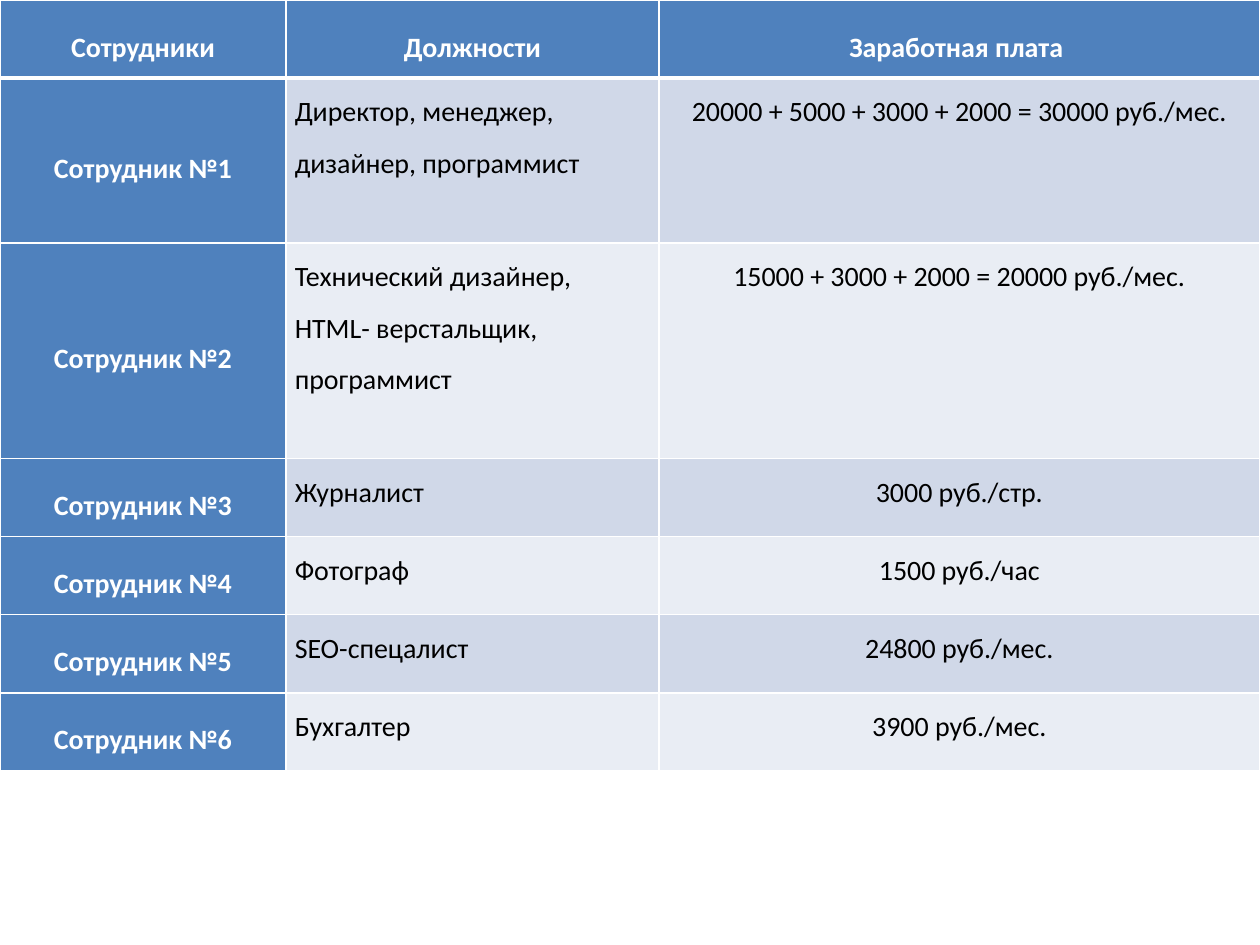
from lxml import etree
from pptx import Presentation
from pptx import util as u
from pptx.dml.color import RGBColor
from pptx.enum import text
from pptx.oxml.ns import qn

BLUE, WHITE, BLACK = "4F81BD", "FFFFFF", "000000"
BANDS = ["D0D8E8", "E9EDF4"]
COLUMN_WIDTHS = [2.27, 2.96, 4.77]
ROW_HEIGHTS = [0.62, 1.31, 1.71] + [0.62] * 4
HEADINGS = ["Сотрудники", "Должности", "Заработная плата "]
EMPLOYEES = [
    ("Директор, менеджер, дизайнер, программист",
     "20000 + 5000 + 3000 + 2000 = 30000 руб./мес."),
    ("Технический дизайнер, HTML- верстальщик, программист",
     "15000 + 3000 + 2000 = 20000 руб./мес."),
    ("Журналист", "3000 руб./стр."),
    ("Фотограф", "1500 руб./час"),
    ("SEO-спецалист", "24800 руб./мес."),
    ("Бухгалтер", "3900 руб./мес."),
]


def color(value):
    return RGBColor.from_string(value)


def apply_format(target, values):
    for name, value in values.items():
        setattr(target, name, value)


def add_borders(cell, bottom_width):
    properties = cell._tc.get_or_add_tcPr()
    for side, width in [("L", 1), ("R", 1), ("T", 1), ("B", bottom_width)]:
        line = etree.SubElement(properties, qn(f"a:ln{side}"), w=str(u.Pt(width)))
        fill = etree.SubElement(line, qn("a:solidFill"))
        etree.SubElement(fill, qn("a:srgbClr"), val=WHITE)


def fill_cell(cell, content, row, column):
    is_heading = row == 0 or column == 0
    add_borders(cell, 3 if row == 0 else 1)
    cell.fill.solid()
    cell.fill.fore_color.rgb = color(BLUE if is_heading else BANDS[(row - 1) % 2])
    apply_format(cell, {
        "text": content,
        "margin_left": u.Inches(0.07), "margin_right": u.Inches(0.07),
        "margin_top": 0, "margin_bottom": 0,
        "vertical_anchor": text.MSO_ANCHOR.MIDDLE if is_heading else text.MSO_ANCHOR.TOP,
    })
    paragraph = cell.text_frame.paragraphs[0]
    is_left = column == 1 and not is_heading
    apply_format(paragraph, {
        "alignment": text.PP_ALIGN.LEFT if is_left else text.PP_ALIGN.CENTER,
        "line_spacing": 1.5,
    })
    font = paragraph.runs[0].font
    apply_format(font, {"name": "Calibri", "size": u.Pt(16), "bold": is_heading})
    font.color.rgb = color(WHITE if is_heading else BLACK)


def add_salary_table(slide, left, top, width, height):
    rows = [HEADINGS] + [
        (f"Сотрудник №{number}", *details)
        for number, details in enumerate(EMPLOYEES, 1)
    ]
    table = slide.shapes.add_table(
        len(rows), len(HEADINGS), left, top, width, height).table
    for column, column_width in zip(table.columns, COLUMN_WIDTHS):
        column.width = u.Inches(column_width)
    for row, row_height in zip(table.rows, ROW_HEIGHTS):
        row.height = u.Inches(row_height)
    for row, contents in enumerate(rows):
        for column, content in enumerate(contents):
            fill_cell(table.cell(row, column), content, row, column)


def main():
    presentation = Presentation()
    apply_format(presentation, {
        "slide_width": u.Inches(10), "slide_height": u.Inches(7.5)})
    slide = presentation.slides.add_slide(presentation.slide_layouts[6])
    add_salary_table(slide, 0, 0, u.Inches(sum(COLUMN_WIDTHS)),
                     u.Inches(sum(ROW_HEIGHTS)))
    presentation.save("out.pptx")


if __name__ == "__main__":
    main()
